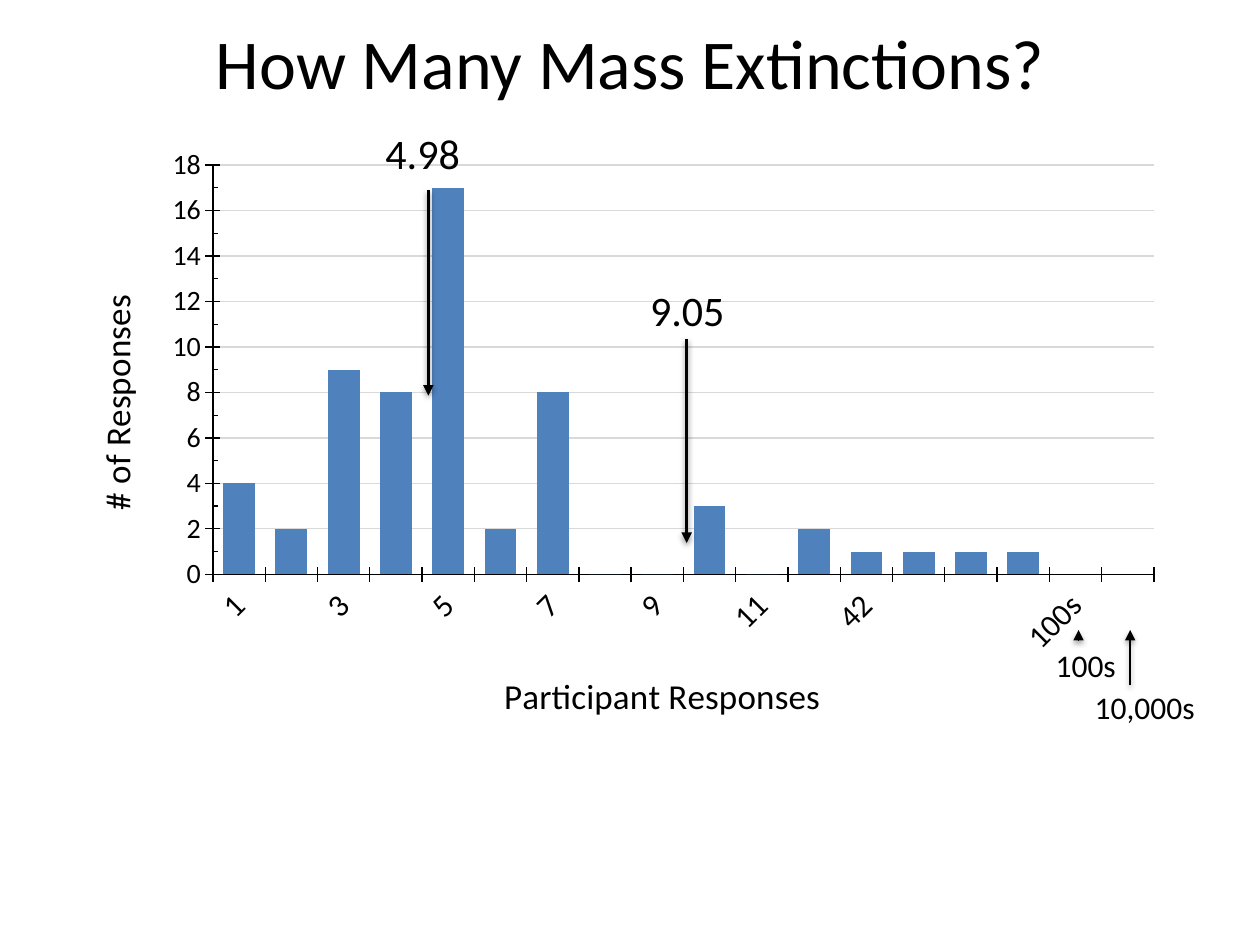
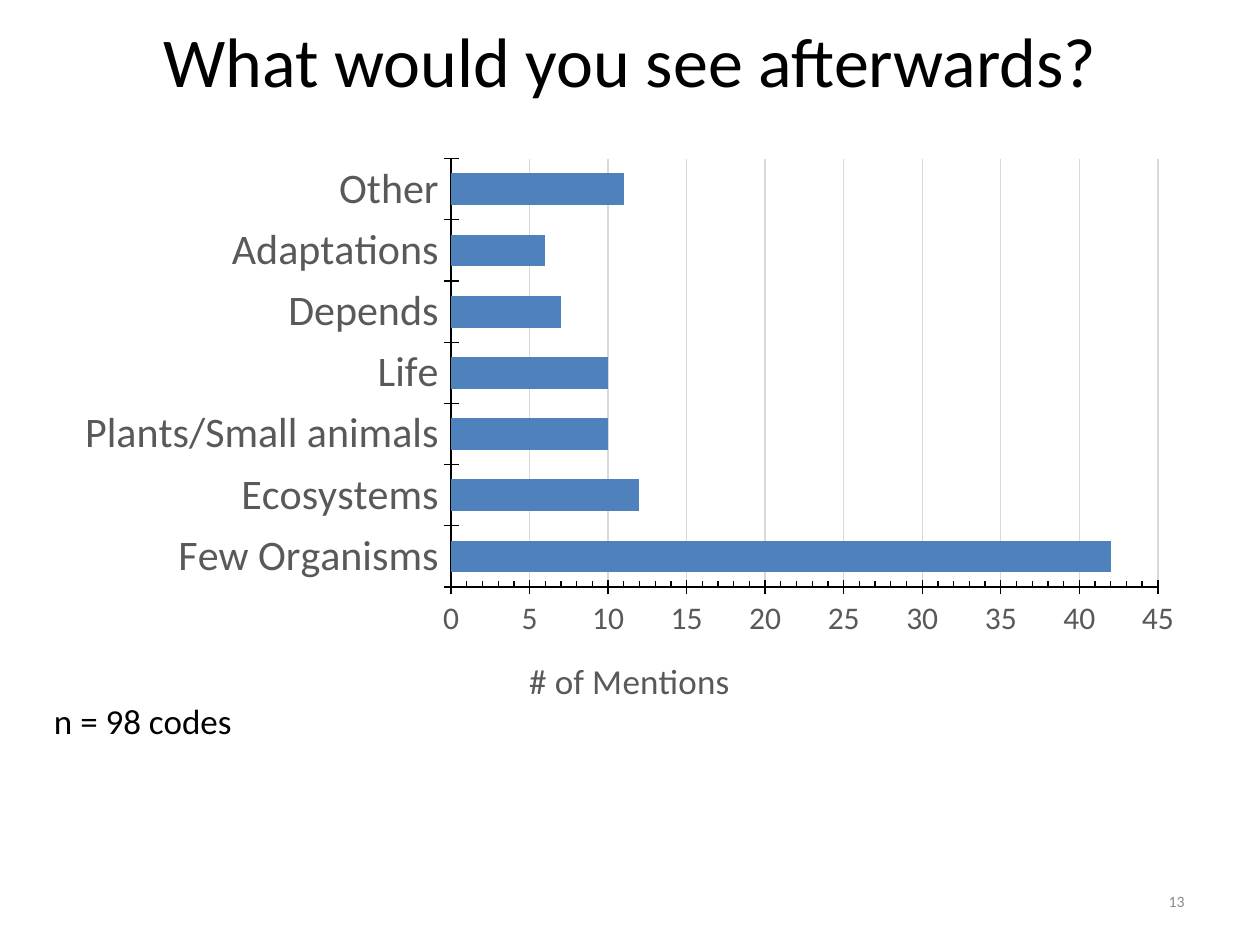
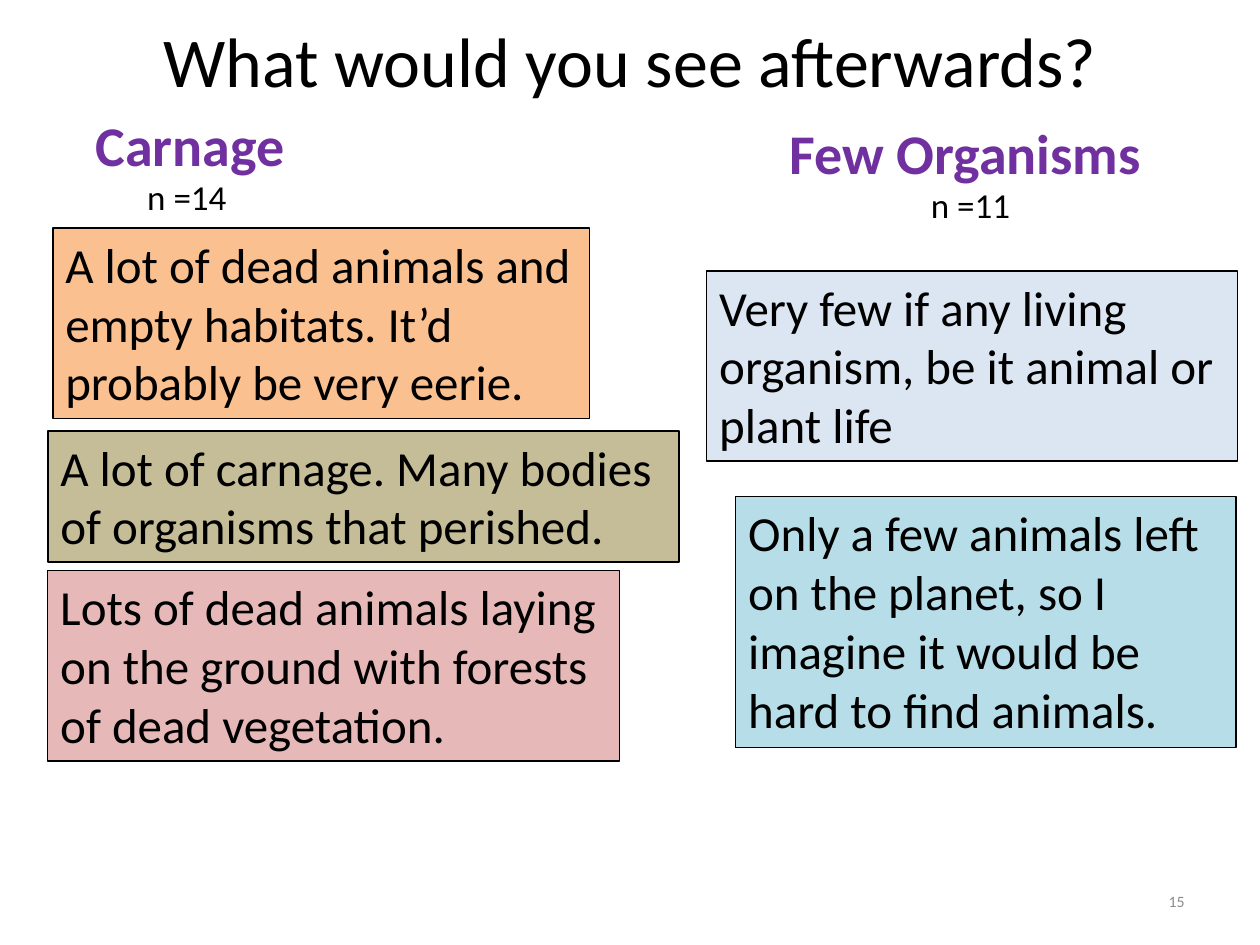
from lxml import etree
from pptx import Presentation
from pptx import util as u
from pptx.chart.data import CategoryChartData
from pptx.dml.color import RGBColor
from pptx.enum import chart as charts, shapes, text
from pptx.oxml import parse_xml
from pptx.oxml.ns import nsdecls, qn

FONT = "Calibri"
BLACK = RGBColor(0x00, 0x00, 0x00)
GREY = RGBColor(0x59, 0x59, 0x59)
PAGE_GREY = RGBColor(0x8C, 0x8C, 0x8C)
GRID = RGBColor(0xD9, 0xD9, 0xD9)
BLUE = RGBColor(0x4F, 0x81, 0xBD)
PURPLE = RGBColor(0x70, 0x30, 0xA0)
ORANGE = RGBColor(0xFA, 0xC0, 0x90)
OLIVE = RGBColor(0xC4, 0xBD, 0x97)
ROSE = RGBColor(0xE6, 0xB9, 0xB8)
PALE_BLUE = RGBColor(0xDC, 0xE6, 0xF2)
AQUA = RGBColor(0xB7, 0xDE, 0xE8)

# Content: places are left, top, width, height in inches on the slide
AFTERWARDS = "What would you see afterwards?"

COUNT_CHART = dict(
    kind=charts.XL_CHART_TYPE.COLUMN_CLUSTERED, place=(0.5, 1.08, 8.83, 4.83),
    categories=[str(n) for n in range(1, 13)] + ["42", "", "", "", "100s", "10,000s"],
    values=[4, 2, 9, 8, 17, 2, 8, 0, 0, 3, 0, 2, 1, 1, 1, 1, None, None],
    plot=(1.69, 1.31, 7.47, 3.25), gap=64, overlap=4, top=18, step=2,
    color=BLACK, category_size=18, value_size=16, turn=-45,
    category_title=("Participant Responses", (3.95, 5.28)),
    value_title=("# of Responses", (0.68, 2.29)))

MENTION_CHART = dict(
    kind=charts.XL_CHART_TYPE.BAR_CLUSTERED, place=(0.5, 1.17, 9, 4.67),
    categories=["Few Organisms", "Ecosystems", "Plants/Small animals", "Life",
                "Depends", "Adaptations", "Other"],
    values=[42, 12, 10, 10, 7, 6, 11],
    plot=(3.58, 1.26, 5.61, 3.4), gap=93, overlap=0, top=45, step=5,
    color=GREY, category_size=24, value_size=18, turn=None,
    category_title=None, value_title=("# of Mentions", (4.15, 5.16)))

# Label, place, size, centred, then arrow x, start y, end y and width
CALLOUTS = [
    ("9.05", (4.86, 2.21, 1.19, 0.5), 24, True, (5.45, 2.69, 4.31, 2)),
    ("4.98", (2.76, 0.96, 1.19, 0.5), 24, True, (3.4, 1.51, 3.14, 2)),
    ("10,000s", (8.59, 5.41, 1, 0.4), 18, False, (8.97, 5.44, 5, 1)),
    ("100s", (8.28, 5.08, 0.7, 0.4), 18, False, (8.56, 5.08, 5, 1)),
]

# Heading, its place, centred, count, its place, quotes
COLUMNS = [
    ("Carnage", (0.66, 0.87, 2.08, 0.54), False, "n =14", (1.07, 1.34, 0.88, 0.44), [
        ("A lot of dead animals and empty habitats. It’d probably be very eerie.",
         (0.42, 1.81, 4.26, 1.51), ORANGE),
        ("A lot of carnage. Many bodies of organisms that perished.",
         (0.38, 3.42, 5.01, 1.04), OLIVE),
        ("Lots of dead animals laying on the ground with forests of dead vegetation.",
         (0.38, 4.53, 4.54, 1.51), ROSE)]),
    ("Few Organisms", (5.87, 0.88, 3.58, 0.65), True, "n =11", (7.29, 1.41, 1.07, 0.44), [
        ("Very few if any living organism, be it animal or plant life",
         (5.61, 2.15, 4.21, 1.51), PALE_BLUE),
        ("Only a few animals left on the planet, so I imagine it would be "
         "hard to find animals.", (5.84, 3.94, 3.97, 1.99), AQUA)]),
]


def inches(place):
    return [u.Inches(length) for length in place]


def set_font(font, size, color=BLACK, bold=False):
    font.name, font.size, font.bold = FONT, u.Pt(size), bold
    font.color.rgb = color


def write(box, words, size, color=BLACK, bold=False, align=text.PP_ALIGN.LEFT,
          anchor=text.MSO_ANCHOR.TOP, wrap=True):
    frame = box.text_frame
    frame.word_wrap = wrap
    frame.vertical_anchor = anchor
    para = frame.paragraphs[0]
    para.alignment = align
    span = para.add_run()
    span.text = words
    set_font(span.font, size, color, bold)


def add_text(parent, words, place, size, **style):
    write(parent.shapes.add_textbox(*inches(place)), words, size, **style)


def add_page(deck, title, top=0, number=None):
    page = deck.slides.add_slide(deck.slide_layouts[5])
    box = page.shapes.title
    box.left, box.top, box.width, box.height = inches((0.5, top, 9, 0.94))
    write(box, title, 40, align=text.PP_ALIGN.CENTER, anchor=text.MSO_ANCHOR.MIDDLE)
    if number:
        add_text(page, number, (7.17, 6.95, 2.33, 0.4), 9, color=PAGE_GREY,
                 align=text.PP_ALIGN.RIGHT, anchor=text.MSO_ANCHOR.MIDDLE)
    return page


def add_layout(parent, part, frame, inner=False):
    """Fix a chart part at its place on the slide, as shares of the chart's frame."""
    left, top, width, height = frame
    shares = [(part[0] - left) / width, (part[1] - top) / height]
    if inner:
        shares += [part[2] / width, part[3] / height]
    old = parent.find(qn("c:layout"))
    if old is not None:
        parent.remove(old)
    layout = parse_xml(f"<c:layout {nsdecls('c')}><c:manualLayout/></c:layout>")
    settings = [("layoutTarget", "inner")] if inner else []
    settings += [("xMode", "edge"), ("yMode", "edge"), *zip("xywh", shares)]
    for name, value in settings:
        etree.SubElement(layout[0], qn("c:" + name)).set("val", str(value))
    if inner:
        parent.insert(0, layout)
    else:
        parent.find(qn("c:tx")).addnext(layout)


def style_axis(axis, size, color, title, frame):
    set_font(axis.tick_labels.font, size, color)
    axis.format.line.color.rgb = BLACK
    axis.format.line.width = u.Pt(0.75)
    axis.major_tick_mark = charts.XL_TICK_MARK.CROSS
    axis.has_title = title is not None
    if title:
        words, corner = title
        span = axis.axis_title.text_frame.paragraphs[0].add_run()
        span.text = words
        set_font(span.font, 20, color)
        add_layout(axis.axis_title._element, corner, frame)


def add_bars(page, look):
    data = CategoryChartData()
    data.categories = look["categories"]
    data.add_series("Series 1", look["values"])
    frame, color = look["place"], look["color"]
    chart = page.shapes.add_chart(look["kind"], *inches(frame), data).chart
    chart.has_legend = chart.has_title = False
    set_font(chart.font, 10)
    add_layout(chart._chartSpace.chart.plotArea, look["plot"], frame, inner=True)

    plot = chart.plots[0]
    plot.vary_by_categories = False
    plot.gap_width, plot.overlap = look["gap"], look["overlap"]
    plot.series[0].format.fill.solid()
    plot.series[0].format.fill.fore_color.rgb = BLUE

    axis = chart.category_axis
    style_axis(axis, look["category_size"], color, look["category_title"], frame)
    if look["turn"]:
        body = axis._element.find(qn("c:txPr")).find(qn("a:bodyPr"))
        body.set("rot", str(look["turn"] * 60000))

    axis = chart.value_axis
    style_axis(axis, look["value_size"], color, look["value_title"], frame)
    axis.minimum_scale, axis.maximum_scale = 0, look["top"]
    axis.major_unit, axis.minor_unit = look["step"], 1
    axis.minor_tick_mark = charts.XL_TICK_MARK.INSIDE
    axis.has_major_gridlines = True
    axis.major_gridlines.format.line.color.rgb = GRID
    axis.major_gridlines.format.line.width = u.Pt(0.75)


def add_arrow(parent, x, start, end, width):
    arrow = parent.shapes.add_connector(
        shapes.MSO_CONNECTOR.STRAIGHT, *inches((x, start, x, end)))
    arrow.line.color.rgb = BLACK
    arrow.line.width = u.Pt(width)
    etree.SubElement(arrow.line._get_or_add_ln(), qn("a:tailEnd")).set("type", "triangle")
    arrow._element.spPr.append(parse_xml(
        f"<a:effectLst {nsdecls('a')}>"
        '<a:outerShdw blurRad="40000" dist="20000" dir="5400000" rotWithShape="0">'
        '<a:srgbClr val="000000"><a:alpha val="38000"/></a:srgbClr>'
        "</a:outerShdw></a:effectLst>"))


def add_quote(page, words, place, fill):
    box = page.shapes.add_shape(shapes.MSO_SHAPE.RECTANGLE, *inches(place))
    box.shadow.inherit = False
    box.fill.solid()
    box.fill.fore_color.rgb = fill
    box.line.color.rgb = BLACK
    box.line.width = u.Pt(0.75)
    write(box, words, 28)


def main():
    deck = Presentation()
    deck.slide_width, deck.slide_height = u.Inches(10), u.Inches(7.5)

    # Number of extinctions, with labelled arrows
    page = add_page(deck, "How Many Mass Extinctions?", top=0.02)
    add_bars(page, COUNT_CHART)
    for words, place, size, centred, arrow in CALLOUTS:
        group = page.shapes.add_group_shape()
        align = text.PP_ALIGN.CENTER if centred else text.PP_ALIGN.LEFT
        add_text(group, words, place, size, align=align, wrap=centred)
        add_arrow(group, *arrow)

    # Coded answers
    page = add_page(deck, AFTERWARDS, number="13")
    add_bars(page, MENTION_CHART)
    add_text(page, "n = 98 codes", (0.33, 5.5, 1.62, 0.44), 20, wrap=False)

    # Quotes in two columns
    page = add_page(deck, AFTERWARDS, number="15")
    for heading, place, centred, count, count_place, quotes in COLUMNS:
        align = text.PP_ALIGN.CENTER if centred else text.PP_ALIGN.LEFT
        add_text(page, heading, place, 32, color=PURPLE, bold=True, align=align,
                 anchor=text.MSO_ANCHOR.MIDDLE)
        add_text(page, count, count_place, 20)
        for quote in quotes:
            add_quote(page, *quote)

    deck.save("out.pptx")


if __name__ == "__main__":
    main()
